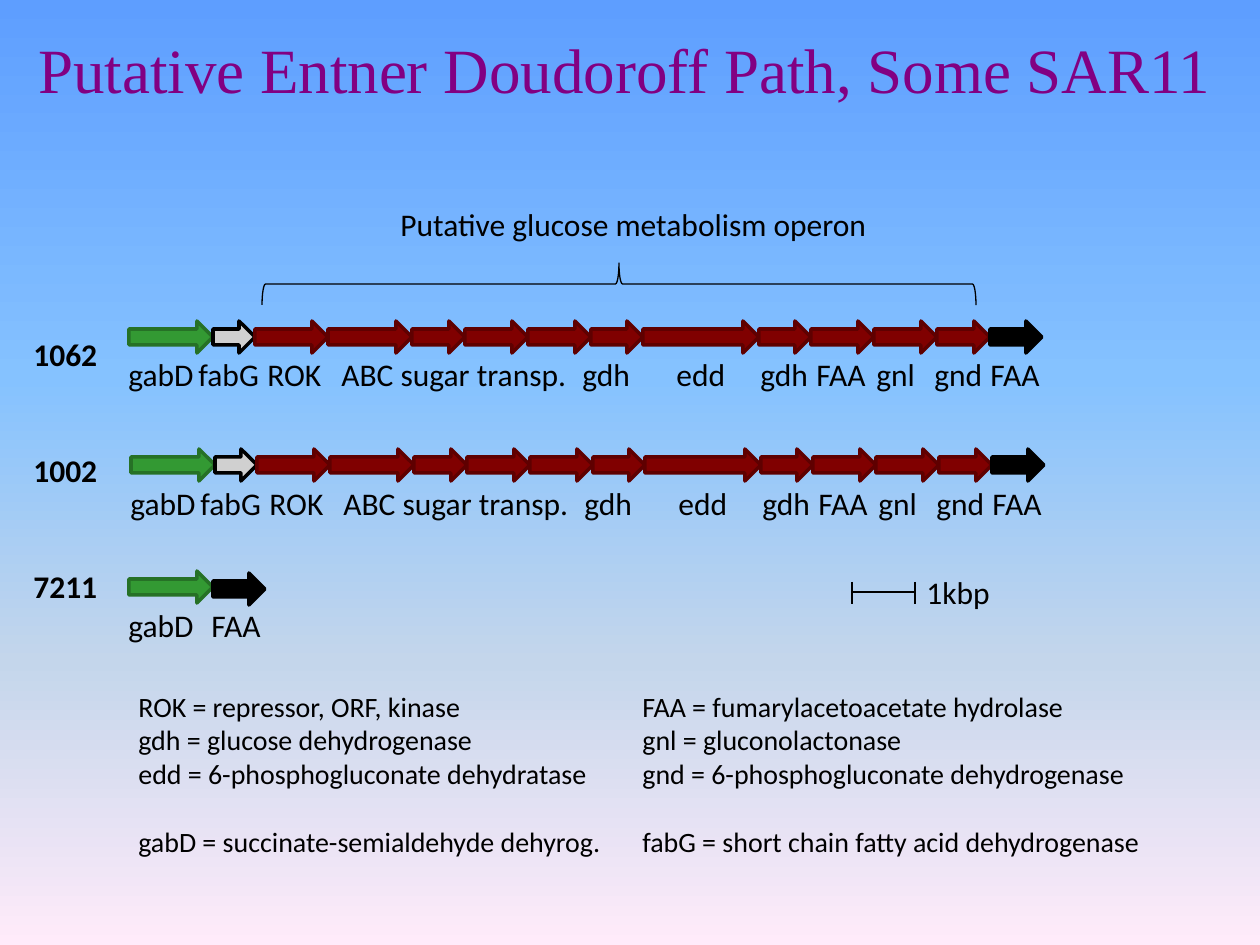
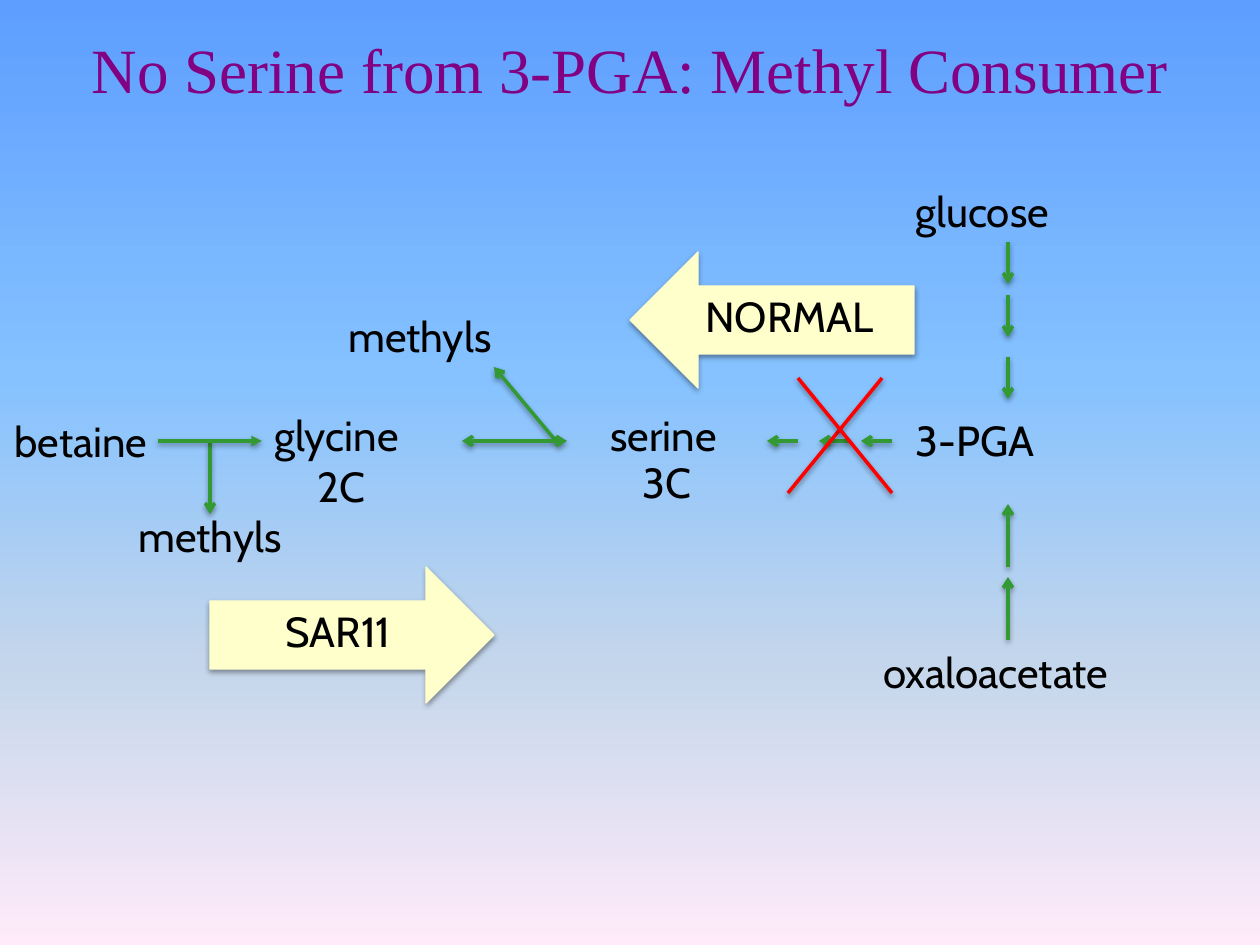
"""Build two slides on sugar and serine metabolism in SAR11."""
from copy import deepcopy

from lxml.etree import SubElement
from pptx import Presentation
from pptx.dml.color import RGBColor
from pptx.enum.shapes import MSO_CONNECTOR, MSO_SHAPE as SHAPE
from pptx.enum.text import MSO_ANCHOR, PP_ALIGN
from pptx.oxml import parse_xml
from pptx.oxml.ns import nsdecls, qn
from pptx.util import Pt

PX = 914400 / 126
BLACK = RGBColor(0x00, 0x00, 0x00)
PURPLE = RGBColor(0x82, 0x00, 0x82)
GREEN = RGBColor(0x33, 0x99, 0x33)
DARK_GREEN = RGBColor(0x26, 0x71, 0x26)
GREY = RGBColor(0xD0, 0xD0, 0xD0)
MAROON = RGBColor(0x80, 0x00, 0x00)
DARK_MAROON = RGBColor(0x5F, 0x00, 0x00)
RED = RGBColor(0xFF, 0x00, 0x00)
CREAM = RGBColor(0xFF, 0xFF, 0xCC)
SKY = [
    (0, RGBColor(0x5E, 0x9E, 0xFF)),
    (40, RGBColor(0x85, 0xC2, 0xFF)),
    (70, RGBColor(0xC4, 0xD6, 0xEB)),
    (100, RGBColor(0xFF, 0xEB, 0xFA)),
]
SHADOW = parse_xml(
    f'<a:outerShdw {nsdecls("a")} blurRad="40000" dist="20000" dir="5400000" rotWithShape="0">'
    '<a:srgbClr val="000000"><a:alpha val="38000"/></a:srgbClr></a:outerShdw>'
)


def emu(*lengths):
    return [round(n * PX) for n in lengths]


def add_text(slide, text, box, size, font, color=BLACK, bold=False):
    s = slide.shapes.add_textbox(*emu(*box))
    tf = s.text_frame
    tf.word_wrap = True
    tf.text = text
    for p in tf.paragraphs:
        for r in p.runs:
            r.font.size = Pt(size)
            r.font.name = font
            r.font.bold = bold
            r.font.color.rgb = color
    return tf


prs = Presentation()
prs.slide_width, prs.slide_height = emu(1260, 945)

fill = prs.slide_master.background.fill
fill.gradient()
fill.gradient_angle = 270
stops = prs.slide_master.element.find(".//" + qn("a:gsLst"))
for stop in list(stops):
    stops.remove(stop)
for position, color in SKY:
    stop = SubElement(stops, qn("a:gs"), pos=str(position * 1000))
    SubElement(stop, qn("a:srgbClr"), val=str(color))

titles = [
    ("Putative Entner Doudoroff Path, Some SAR11", 21, 1207),
    ("No Serine from 3-PGA: Methyl Consumer", 0, 1260),
]
for title, x, width in titles:
    slide = prs.slides.add_slide(prs.slide_layouts[6])
    tf = add_text(slide, title, (x, 0, width, 136), 36, "Times New Roman", PURPLE)
    tf.vertical_anchor = MSO_ANCHOR.MIDDLE
    tf.paragraphs[0].alignment = PP_ALIGN.CENTER
operon, serine = prs.slides

gab = [(8, GREEN, DARK_GREEN)]
fab = [(4, GREY, BLACK)]
sugar_genes = [(n, MAROON, DARK_MAROON) for n in (7, 8, 5, 6, 6, 5, 11, 5, 6, 6, 5)]
faa = [(5, BLACK, BLACK)]
gene_labels = [
    ("gabD", -13, 105), ("fabG", 57, 105), ("ROK", 126, 84),
    ("ABC sugar transp.", 200, 252), ("gdh", 441, 84), ("edd", 535, 84),
    ("gdh", 619, 84), ("FAA", 675, 84), ("gnl", 735, 84),
    ("gnd", 793, 84), ("FAA", 849, 84),
]
full_row = gab + fab + sugar_genes + faa
gene_rows = [
    (129, 321, 349, full_row, gene_labels),
    (131, 449, 478, full_row, gene_labels),
    (129, 571, 600, gab, gene_labels[:1]),
    (213, 573, 600, faa, [("FAA", -14, 84)]),
]
for x, arrow_y, label_y, genes, labels in gene_rows:
    units = 0
    for length, color, border in genes:
        left = x + units * 21 // 2
        units += length
        right = x + units * 21 // 2
        s = operon.shapes.add_shape(SHAPE.RIGHT_ARROW, *emu(left, arrow_y, right - left, 32))
        s.shadow.inherit = False
        s.fill.solid()
        s.fill.fore_color.rgb = color
        s.line.color.rgb = border
        s.line.width = Pt(2)
    for label, offset, width in labels:
        add_text(operon, label, (x + offset, label_y, width, 50), 18, "Calibri")

for i, strain in enumerate(("1062", "1002", "7211")):
    add_text(operon, strain, (21, 329 + 116 * i, 105, 50), 18, "Calibri", bold=True)

brace = operon.shapes.add_shape(SHAPE.RIGHT_BRACE, *emu(598, -73, 42, 714))
brace.rotation = 270
brace.shadow.inherit = False
brace.fill.background()
brace.line.color.rgb = BLACK
brace.line.width = Pt(0.75)
add_text(operon, "Putative glucose metabolism operon", (388, 199, 557, 53), 18, "Calibri")
add_text(operon, "1kbp", (914, 567, 126, 50), 18, "Calibri")

legend = [
    "ROK = repressor, ORF, kinase\tFAA = fumarylacetoacetate hydrolase",
    "gdh = glucose dehydrogenase\tgnl = gluconolactonase",
    "edd = 6-phosphogluconate dehydratase\tgnd = 6-phosphogluconate dehydrogenase",
    "gabD = succinate-semialdehyde dehyrog.\tfabG = short chain fatty acid dehydrogenase",
]
tf = add_text(operon, "\n".join(legend), (126, 683, 1050, 183), 16, "Calibri")
tf.paragraphs[-1].space_before = Pt(19.5)
for p in tf.paragraphs:
    tabs = SubElement(p._p.get_or_add_pPr(), qn("a:tabLst"))
    SubElement(tabs, qn("a:tab"), pos=str(emu(504)[0]), algn="l")

block_arrows = [
    (SHAPE.LEFT_ARROW, 630, 252, "NORMAL", 693, 284),
    (SHAPE.RIGHT_ARROW, 210, 567, "SAR11", 273, 599),
]
for kind, x, y, label, label_x, label_y in block_arrows:
    s = serine.shapes.add_shape(kind, *emu(x, y, 284, 136))
    s.fill.solid()
    s.fill.fore_color.rgb = CREAM
    s.line.color.rgb = CREAM
    s.line.width = Pt(0.75)
    s.shadow.inherit = False
    s.element.spPr.find(qn("a:effectLst")).append(deepcopy(SHADOW))
    add_text(serine, label, (label_x, label_y, 242, 63), 24, "Cabin")

metabolites = [
    ("glucose", 903, 179, 210), ("oxaloacetate", 871, 640, 273),
    ("3-PGA", 903, 408, 210), ("serine", 598, 403, 168), ("3C", 630, 450, 116),
    ("glycine", 262, 403, 168), ("2C", 305, 454, 116), ("betaine", 2, 409, 186),
    ("methyls", 336, 304, 199), ("methyls", 126, 504, 199),
]
for name, x, y, width in metabolites:
    add_text(serine, name, (x, y, width, 63), 24, "Cabin")

scale_bar = [(852, 592, 915, 592), (852, 582, 852, 604), (915, 582, 915, 604)]
steps = [(1008, y, 1008, y + 42) for y in (242, 295, 357)]
steps += [(1008, y, 1008, y - 63) for y in (640, 567)]
steps += [(x, 441, x - 31, 441) for x in (892, 850, 798)]
steps += [(556, 441, 494, 367), (210, 441, 210, 514)]
cross = [(882, 378, 788, 493), (798, 378, 892, 493)]
line_sets = [
    (operon, scale_bar, BLACK, 0.75, None, None),
    (serine, steps, GREEN, 2, None, "arrow"),
    (serine, [(567, 441, 462, 441)], GREEN, 2, "arrow", "arrow"),
    (serine, [(158, 441, 262, 441)], GREEN, 2, None, "triangle"),
    (serine, cross, RED, 2, None, None),
]
for slide, lines, color, width, head, tail in line_sets:
    for ends in lines:
        s = slide.shapes.add_connector(MSO_CONNECTOR.STRAIGHT, *emu(*ends))
        s.line.color.rgb = color
        s.line.width = Pt(width)
        for tag, tip in (("a:headEnd", head), ("a:tailEnd", tail)):
            if tip:
                SubElement(s.line._get_or_add_ln(), qn(tag), type=tip)
        effects = SubElement(s.element.spPr, qn("a:effectLst"))
        if slide is not operon and color != BLACK:
            effects.append(deepcopy(SHADOW))

prs.save("out.pptx")
